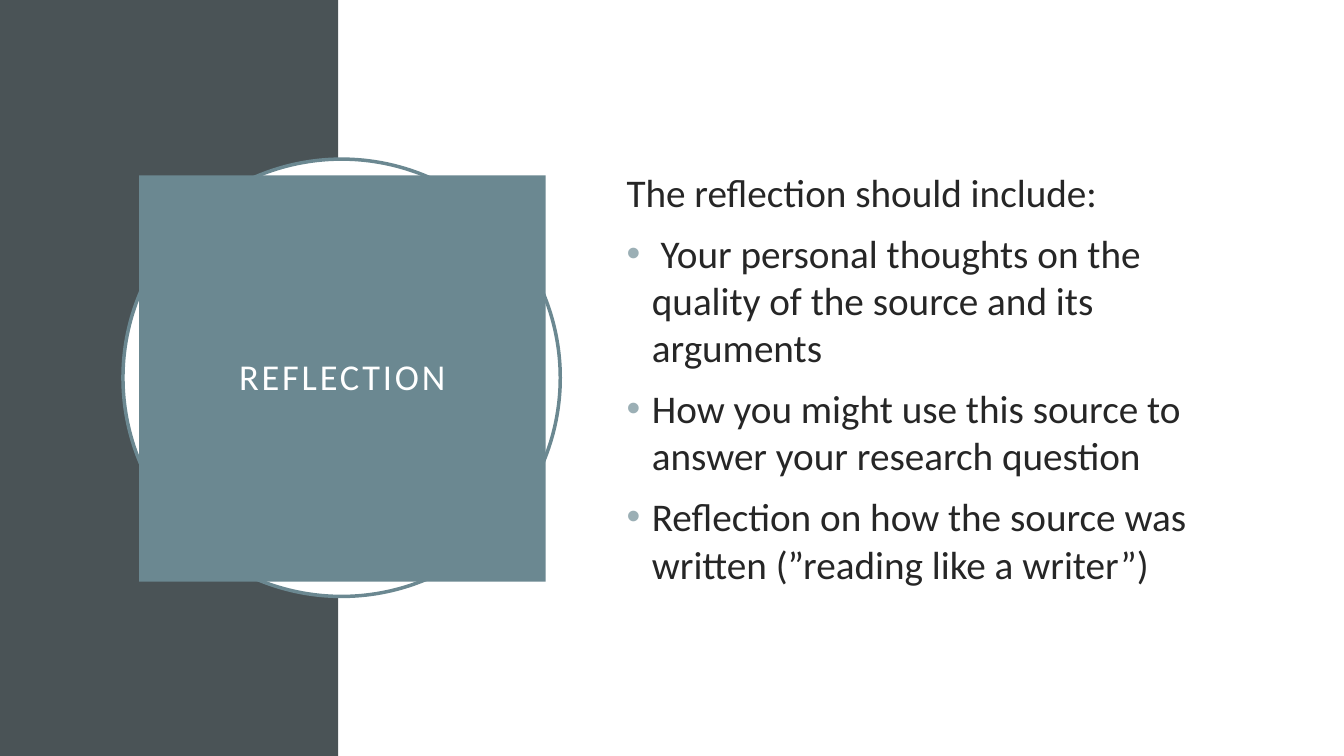
from dataclasses import dataclass

from pptx import Presentation
from pptx import util as u
from pptx.dml.color import RGBColor
from pptx.enum import shapes, text
from pptx.oxml.xmlchemy import OxmlElement


@dataclass(frozen=True)
class Theme:
    font: str = "Calibri"
    title_size: float = 26
    body_size: float = 28
    outline_width: float = 2.5
    title_tracking: int = 200
    slate: str = "4A5356"
    teal: str = "6B8891"
    bullet: str = "9BAFB5"
    ink: str = "262626"
    white: str = "FFFFFF"


@dataclass(frozen=True)
class Panel:
    kind: shapes.MSO_SHAPE
    left: float
    top: float
    width: float
    height: float
    fill: str
    line: str = ""


THEME = Theme()
SLIDE_WIDTH, SLIDE_HEIGHT = 33.87, 19.05
BAND_WIDTH = 8.53
RECTANGLE = shapes.MSO_SHAPE.RECTANGLE

BACKDROP = (
    Panel(RECTANGLE, 0, 0, BAND_WIDTH, SLIDE_HEIGHT, THEME.slate),
    Panel(RECTANGLE, BAND_WIDTH, 0, SLIDE_WIDTH - BAND_WIDTH, SLIDE_HEIGHT, THEME.white),
    Panel(shapes.MSO_SHAPE.OVAL, 3.1, 4.01, 11.02, 11.02, THEME.white, THEME.teal),
)
TITLE_PANEL = Panel(RECTANGLE, 3.51, 4.42, 10.24, 10.24, THEME.teal)
TITLE = "REFLECTION"
INTRO = "The reflection should include:"
POINTS = (
    " Your personal thoughts on the quality of the source and its arguments",
    "How you might use this source to answer your research question",
    "Reflection on how the source was written (”reading like a writer”)",
)


def color(value: str) -> RGBColor:
    return RGBColor.from_string(value)


def draw_panel(page, panel: Panel):
    box = page.shapes.add_shape(
        panel.kind, u.Cm(panel.left), u.Cm(panel.top), u.Cm(panel.width), u.Cm(panel.height)
    )
    box.shadow.inherit = False
    box.fill.solid()
    box.fill.fore_color.rgb = color(panel.fill)
    if panel.line:
        box.line.color.rgb = color(panel.line)
        box.line.width = u.Pt(THEME.outline_width)
    else:
        box.line.fill.background()
    return box


def style_runs(para, size: float, ink: str) -> None:
    for span in para.runs:
        span.font.name = THEME.font
        span.font.size = u.Pt(size)
        span.font.color.rgb = color(ink)


def add_bullet(para) -> None:
    properties = para._p.get_or_add_pPr()
    properties.set("marL", str(u.Cm(0.64)))
    properties.set("indent", str(-u.Cm(0.64)))
    bullet_color = OxmlElement("a:buClr")
    swatch = OxmlElement("a:srgbClr")
    swatch.set("val", THEME.bullet)
    bullet_color.append(swatch)
    typeface = OxmlElement("a:buFont")
    typeface.set("typeface", "Arial")
    mark = OxmlElement("a:buChar")
    mark.set("char", "•")
    properties.extend((bullet_color, typeface, mark))


def draw_title(page) -> None:
    frame = draw_panel(page, TITLE_PANEL).text_frame
    frame.word_wrap = True
    frame.vertical_anchor = text.MSO_ANCHOR.MIDDLE
    frame.margin_left = frame.margin_right = u.Cm(0.51)
    frame.margin_top = frame.margin_bottom = u.Cm(0.51)
    frame.text = TITLE
    para = frame.paragraphs[0]
    para.alignment = text.PP_ALIGN.CENTER
    para.line_spacing = 0.9
    style_runs(para, THEME.title_size, THEME.white)
    for span in para.runs:
        span.font._element.set("spc", str(THEME.title_tracking))


def draw_body(page) -> None:
    frame = page.shapes.add_textbox(u.Cm(15.54), u.Cm(3.89), u.Cm(14.78), u.Cm(11.25)).text_frame
    frame.word_wrap = True
    frame.vertical_anchor = text.MSO_ANCHOR.MIDDLE
    frame.text = "\n".join((INTRO, *POINTS))
    for para in frame.paragraphs:
        style_runs(para, THEME.body_size, THEME.ink)
    for para in frame.paragraphs[1:]:
        add_bullet(para)
        para.space_before = u.Pt(10)


def main() -> None:
    deck = Presentation()
    deck.slide_width, deck.slide_height = u.Cm(SLIDE_WIDTH), u.Cm(SLIDE_HEIGHT)
    page = deck.slides.add_slide(deck.slide_layouts[6])
    for panel in BACKDROP:
        draw_panel(page, panel)
    draw_title(page)
    draw_body(page)
    deck.save("out.pptx")


if __name__ == "__main__":
    main()
